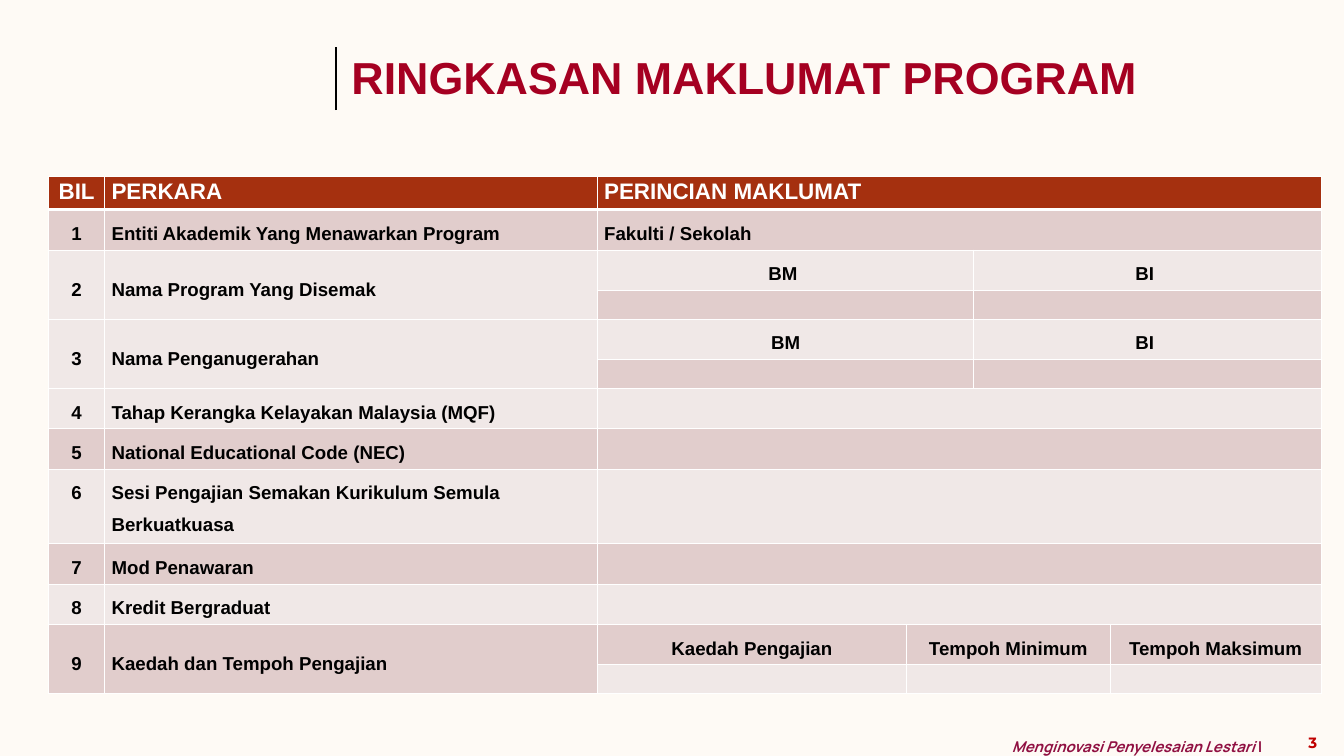
from pptx import Presentation
from pptx.dml.color import RGBColor
from pptx.enum.shapes import MSO_CONNECTOR
from pptx.enum.text import MSO_ANCHOR, MSO_AUTO_SIZE, PP_ALIGN
from pptx.oxml import parse_xml
from pptx.oxml.ns import nsdecls
from pptx.util import Inches, Pt

LINE = MSO_CONNECTOR.STRAIGHT
TOP, MIDDLE = MSO_ANCHOR.TOP, MSO_ANCHOR.MIDDLE
LEFT, CENTER = PP_ALIGN.LEFT, PP_ALIGN.CENTER
FIXED = MSO_AUTO_SIZE.NONE

COLORS = {
    "back": "FEFAF5", "title": "A50021", "head": "A5300F", "dark": "E1CDCC",
    "light": "F0E8E7", "white": "FFFFFF", "black": "000000",
    "motto": "901042", "page": "C00000",
}
COLS = [0.84, 7.33, 4.6, 1, 2.03, 3.14]
HEAD_H, ROW_H, TALL_H, BLANK_H = 0.49, 0.6, 1.11, 0.43

# Each item: label, row height, and details as (column, span, text, alignment)
WIDE = [(2, 4, "", LEFT)]
ITEMS = [
    ("Entiti Akademik Yang Menawarkan Program", ROW_H,
     [(2, 4, "Fakulti / Sekolah", LEFT)]),
    ("Nama Program Yang Disemak", ROW_H,
     [(2, 2, "BM ", CENTER), (4, 2, "BI ", CENTER)]),
    ("Nama Penganugerahan", ROW_H,
     [(2, 2, "BM", CENTER), (4, 2, "BI ", CENTER)]),
    ("Tahap Kerangka Kelayakan Malaysia (MQF)", ROW_H, WIDE),
    ("National Educational Code (NEC)", ROW_H, WIDE),
    ("Sesi Pengajian Semakan Kurikulum Semula Berkuatkuasa", TALL_H, WIDE),
    ("Mod Penawaran", ROW_H, WIDE),
    ("Kredit Bergraduat", ROW_H, WIDE),
    ("Kaedah dan Tempoh Pengajian", ROW_H,
     [(2, 1, "Kaedah Pengajian", CENTER), (3, 2, "Tempoh Minimum", CENTER),
      (5, 1, "Tempoh Maksimum", CENTER)]),
]


def color(name):
    return RGBColor.from_string(COLORS[name])


def style(font, face, size, tint):
    font.name, font.size, font.bold = face, Pt(size), True
    font.color.rgb = color(tint)


def border(cell, low):
    """Rule the cell in white, with the given width for the lower edge."""
    props = cell._tc.get_or_add_tcPr()
    for i, (side, width) in enumerate(
            [("L", 1), ("R", 1), ("T", 1), ("B", low)]):
        props.insert(i, parse_xml(
            f'<a:ln{side} {nsdecls("a")} w="{Pt(width)}"><a:solidFill>'
            f'<a:srgbClr val="{COLORS["white"]}"/></a:solidFill></a:ln{side}>'))


def write(cell, text, align, size=20, tint="black", gap=1.5):
    if not text:
        return
    cell.text_frame.text = text
    para = cell.text_frame.paragraphs[0]
    para.alignment, para.line_spacing = align, gap
    style(para.runs[0].font, "Arial", size, tint)


def add_title(slide, x, y, w, h):
    # Title with the rule at its left
    title = slide.shapes.title
    title.left, title.top = Inches(x), Inches(y)
    title.width, title.height = Inches(w), Inches(h)
    frame = title.text_frame
    frame.auto_size, frame.vertical_anchor = FIXED, TOP
    frame.text = "RINGKASAN MAKLUMAT PROGRAM"
    para = frame.paragraphs[0]
    para.alignment = LEFT
    style(para.runs[0].font, "Arial", 48, "title")

    rule = slide.shapes.add_connector(
        LINE, Inches(x - 0.13), Inches(y + 0.95),
        Inches(x - 0.13), Inches(y + 0.01))
    rule.line.color.rgb, rule.line.width = color("black"), Pt(3)
    rule._element.spPr.append(parse_xml(f'<a:effectLst {nsdecls("a")}/>'))


def add_grid(slide, x, y):
    # A split item takes a second, blank row
    highs = [HEAD_H]
    for _, high, parts in ITEMS:
        highs += [high] + ([BLANK_H] if len(parts) > 1 else [])
    grid = slide.shapes.add_table(
        len(highs), len(COLS), Inches(x), Inches(y),
        Inches(sum(COLS)), Inches(sum(highs))).table
    for col, wide in zip(grid.columns, COLS):
        col.width = Inches(wide)

    # Heights, bands and borders
    for r, high in enumerate(highs):
        grid.rows[r].height = Inches(high)
        tint = "head" if r == 0 else "dark" if r % 2 else "light"
        for c in range(len(COLS)):
            cell = grid.cell(r, c)
            cell.fill.solid()
            cell.fill.fore_color.rgb = color(tint)
            border(cell, 1 if r else 3)

    def join(r, c, down, wide):
        if down > 1 or wide > 1:
            grid.cell(r, c).merge(grid.cell(r + down - 1, c + wide - 1))

    # Header
    join(0, 2, 1, 4)
    for c, text in enumerate(["BIL", "PERKARA", "PERINCIAN MAKLUMAT"]):
        write(grid.cell(0, c), text, LEFT if c else CENTER, 24, "white", 1)

    # Items
    r = 1
    for num, (label, _, parts) in enumerate(ITEMS, 1):
        down = 2 if len(parts) > 1 else 1
        for c, text, align in [(0, str(num), CENTER), (1, label, LEFT)]:
            join(r, c, down, 1)
            write(grid.cell(r, c), text, align)
            if down > 1:
                grid.cell(r, c).vertical_anchor = MIDDLE
        for c, wide, text, align in parts:
            for k in range(down):
                join(r + k, c, 1, wide)
            write(grid.cell(r, c), text, align)
        r += down


def add_footer(slide, x, y):
    # Motto
    box = slide.shapes.add_textbox(
        Inches(x), Inches(y), Inches(4.2), Inches(0.38))
    frame = box.text_frame
    frame.word_wrap = True
    frame.margin_left = frame.margin_right = 0
    frame.margin_top = frame.margin_bottom = 0
    para = frame.paragraphs[0]
    para.line_spacing = 1.4
    for text, slant in [("Menginovasi Penyelesaian Lestari ", True),
                        ("|", False)]:
        run = para.add_run()
        run.text = text
        style(run.font, "Manrope", 16, "motto")
        run.font.italic = slant

    # Page number
    box = slide.shapes.add_textbox(
        Inches(x + 4.01), Inches(y), Inches(0.93), Inches(0.37))
    box.text_frame.word_wrap = True
    box.text_frame.text = "3"
    para = box.text_frame.paragraphs[0]
    para.alignment = CENTER
    style(para.runs[0].font, "Montserrat", 16, "page")


def main():
    deck = Presentation()
    deck.slide_width, deck.slide_height = Inches(20), Inches(11.25)
    slide = deck.slides.add_slide(deck.slide_layouts[5])
    slide.background.fill.solid()
    slide.background.fill.fore_color.rgb = color("back")
    add_footer(slide, 15.06, 10.87)
    add_grid(slide, 0.72, 2.62)
    add_title(slide, 5.13, 0.69, 12.78, 1.25)
    deck.save("out.pptx")


if __name__ == "__main__":
    main()
